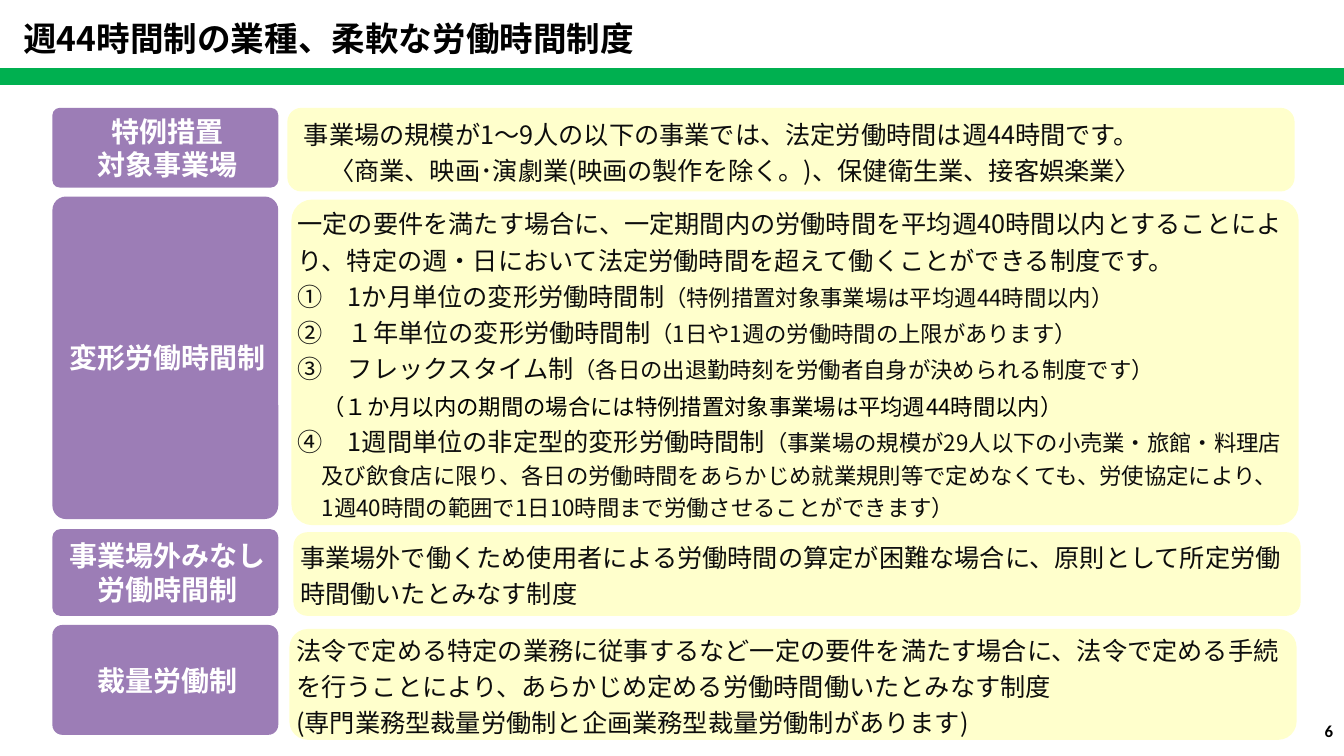
from dataclasses import dataclass

from lxml.etree import SubElement
from pptx import Presentation
from pptx.dml.color import RGBColor
from pptx.enum.shapes import MSO_SHAPE as Shape
from pptx.enum.text import MSO_ANCHOR as Anchor, MSO_AUTO_SIZE as AutoSize, PP_ALIGN as Align
from pptx.oxml.ns import qn
from pptx.util import Inches, Pt


@dataclass(frozen=True)
class Theme:
    font: str = "Noto Sans CJK JP"
    number_font: str = "Calibri"
    purple: str = "9C7DB6"
    cream: str = "FFFFCC"
    green: str = "00B050"
    white: str = "FFFFFF"
    black: str = "000000"
    ink: str = "0D0D0D"
    title: int = 24
    label: int = 20
    body: int = 18
    detail: int = 16
    number: int = 12


THEME = Theme()
LABEL_INSETS = (0.08, 0.04, 0.04, 0.04)
TEXT_INSETS = (0.08, 0.04, 0, 0.04)

# label lines, (top, height, corner)
LABELS = [
    (["特例措置", "対象事業場"], (1.07, 0.79, 0.091)),
    (["変形労働時間制"], (1.95, 3.2, 0.06)),
    (["事業場外みなし労働時間制"], (5.25, 0.86, 0.091)),
    (["裁量労働制"], (6.2, 1.09, 0.091)),
]

# left, top, height, corner
PANELS = [
    (2.85, 1.07, 0.83, 0.167),
    (2.89, 1.98, 3.23, 0.064),
    (2.91, 5.28, 0.83, 0.167),
    (2.87, 6.24, 1.1, 0.167),
]

# paragraphs, (left, top, height), anchor
DESCRIPTIONS = [
    (["事業場の規模が1～9人の以下の事業では、法定労働時間は週44時間です。",
      "　〈商業、映画･演劇業(映画の製作を除く。)、保健衛生業、接客娯楽業〉"],
     (2.93, 1.15, 0.67), Anchor.MIDDLE),
    (["事業場外で働くため使用者による労働時間の算定が困難な場合に、原則として所定労働"
      "時間働いたとみなす制度"],
     (2.89, 5.27, 0.84), Anchor.TOP),
    (["法令で定める特定の業務に従事するなど一定の要件を満たす場合に、法令で定める手続"
      "を行うことにより、あらかじめ定める労働時間働いたとみなす制度",
      "(専門業務型裁量労働制と企画業務型裁量労働制があります)"],
     (2.85, 6.19, 1.1), Anchor.TOP),
]

FLEXIBLE_INTRO = ("一定の要件を満たす場合に、一定期間内の労働時間を平均週40時間以内とすることに"
                  "より、特定の週・日において法定労働時間を超えて働くことができる制度です。")

# system, detail, detail colour
FLEXIBLE_SYSTEMS = [
    ("①　1か月単位の変形労働時間制", "（特例措置対象事業場は平均週44時間以内）", THEME.ink),
    ("②　１年単位の変形労働時間制", "（1日や1週の労働時間の上限があります）", THEME.ink),
    ("③　フレックスタイム制", "（各日の出退勤時刻を労働者自身が決められる制度です）", THEME.ink),
    ("　", "（１か月以内の期間の場合には特例措置対象事業場は平均週44時間以内）", THEME.black),
    ("④　1週間単位の非定型的変形労働時間制",
     "（事業場の規模が29人以下の小売業・旅館・料理店及び飲食店に限り、各日の労働時間を"
     "あらかじめ就業規則等で定めなくても、労使協定により、1週40時間の範囲で1日10時間まで"
     "労働させることができます）", THEME.ink),
]


def color(value):
    return RGBColor.from_string(value)


def place(shape, left, top, width, height):
    shape.left, shape.top = Inches(left), Inches(top)
    shape.width, shape.height = Inches(width), Inches(height)


def set_frame(shape, insets, anchor):
    frame = shape.text_frame
    frame.word_wrap = True
    frame.auto_size = AutoSize.NONE
    frame.vertical_anchor = anchor
    frame.margin_left, frame.margin_top, frame.margin_right, frame.margin_bottom = map(Inches, insets)
    return frame


def set_font(para, size, ink, bold=False, name=THEME.font):
    """Set the paragraph's font, for East Asian characters as well."""
    font = para.font
    font.size, font.bold, font.name = Pt(size), bold, name
    font.color.rgb = color(ink)
    properties = para._p.pPr.find(qn("a:defRPr"))
    SubElement(properties, qn("a:ea")).set("typeface", name)


def paragraphs(frame, count):
    """Return the frame's first paragraph and as many new ones as needed."""
    return [frame.paragraphs[0]] + [frame.add_paragraph() for _ in range(count - 1)]


def write(frame, lines, align, size, ink, bold=False, spacing=1.0):
    for para, line in zip(paragraphs(frame, len(lines)), lines):
        para.text, para.alignment, para.line_spacing = line, align, spacing
        set_font(para, size, ink, bold)


def add_box(page, area, corner=None, fill=None):
    kind = Shape.RECTANGLE if corner is None else Shape.ROUNDED_RECTANGLE
    box = page.shapes.add_shape(kind, *map(Inches, area))
    box.shadow.inherit = False
    box.line.fill.background()
    if corner is not None:
        box.adjustments[0] = corner
    if fill:
        box.fill.solid()
        box.fill.fore_color.rgb = color(fill)
    else:
        box.fill.background()
    return box


def add_label(page, lines, top, height, corner):
    box = add_box(page, (0.52, top, 2.24, height), corner, THEME.purple)
    frame = set_frame(box, LABEL_INSETS, Anchor.MIDDLE)
    write(frame, lines, Align.CENTER, THEME.label, THEME.white, bold=True)


def add_description(page, lines, left, top, height, anchor):
    box = add_box(page, (left, top, 9.96, height), 0.026)
    frame = set_frame(box, TEXT_INSETS, anchor)
    write(frame, lines, Align.LEFT, THEME.body, THEME.ink, spacing=1.2)


def fill_title(page):
    title = page.shapes.title
    place(title, 0.13, 0.13, 11.81, 0.5)
    frame = set_frame(title, (0.1, 0.05, 0.1, 0.05), Anchor.TOP)
    write(frame, ["週44時間制の業種、柔軟な労働時間制度"], Align.LEFT, THEME.title, THEME.black, bold=True)


def fill_flexible_list(page):
    body = page.placeholders[1]
    place(body, 2.87, 1.97, 9.91, 3.15)
    page.shapes._spTree.append(body._element)  # bring in front of its panel
    frame = set_frame(body, TEXT_INSETS, Anchor.TOP)
    rows = [(FLEXIBLE_INTRO, "", THEME.ink)] + FLEXIBLE_SYSTEMS
    for index, (para, row) in enumerate(zip(paragraphs(frame, len(rows)), rows)):
        hanging = Inches(0.24) if index else 0
        properties = para._p.get_or_add_pPr()
        properties.set("marL", str(hanging))
        properties.set("indent", str(-hanging))
        SubElement(properties, qn("a:buNone"))
        para.line_spacing, para.space_before = 1.2, Pt(0)
        system, detail, ink = row
        set_font(para, THEME.body, ink)
        para.add_run().text = system
        if detail:
            span = para.add_run()
            span.text = detail
            span.font.size = Pt(THEME.detail)


def add_page_number(page):
    box = page.shapes.add_textbox(*map(Inches, (10.21, 7.05, 3.11, 0.4)))
    frame = set_frame(box, (0.1, 0.05, 0.1, 0.05), Anchor.MIDDLE)
    para = frame.paragraphs[0]
    para.text, para.alignment = "6", Align.RIGHT
    set_font(para, THEME.number, THEME.black, bold=True, name=THEME.number_font)


def main():
    deck = Presentation()
    deck.slide_width, deck.slide_height = Inches(13.33), Inches(7.5)
    page = deck.slides.add_slide(deck.slide_layouts[1])
    for left, top, height, corner in PANELS:
        add_box(page, (left, top, 9.99, height), corner, THEME.cream)
    for lines, position in LABELS:
        add_label(page, lines, *position)
    for lines, position, anchor in DESCRIPTIONS:
        add_description(page, lines, *position, anchor)
    band = add_box(page, (0, 0.69, 13.33, 0.14), fill=THEME.green)
    band.line.color.rgb = color(THEME.green)
    band.line.width = Pt(2)
    fill_title(page)
    fill_flexible_list(page)
    add_page_number(page)
    deck.save("out.pptx")


if __name__ == "__main__":
    main()
